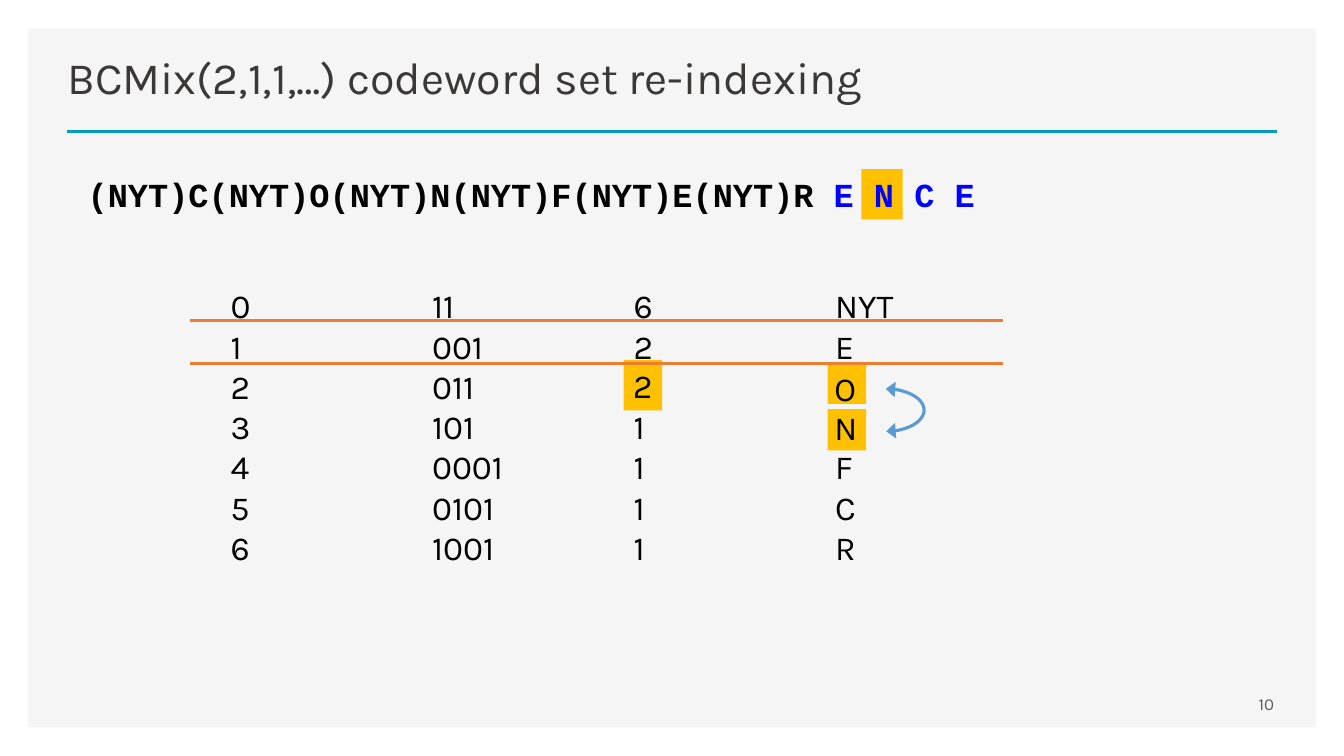
import pptx
import pptx.util
from lxml import etree
from pptx.dml.color import RGBColor
from pptx.enum.shapes import MSO_CONNECTOR, MSO_SHAPE
from pptx.enum.text import MSO_ANCHOR, PP_ALIGN
from pptx.oxml.ns import qn
from pptx.util import Cm

# Colours and fonts
PANEL = RGBColor(0xF5, 0xF5, 0xF5)
TEAL = RGBColor(0x00, 0x9B, 0xC0)
GOLD = RGBColor(0xFF, 0xC0, 0x00)
ORANGE = RGBColor(0xED, 0x7D, 0x31)
SWAP_BLUE = RGBColor(0x5B, 0x9B, 0xD5)
CODE_BLUE = RGBColor(0x00, 0x00, 0xFF)
TITLE_GREY = RGBColor(0x3B, 0x38, 0x38)
NUMBER_GREY = RGBColor(0x59, 0x59, 0x59)
BLACK = RGBColor(0, 0, 0)
SANS, MONO = "Karla", "Courier New"

# Content
TITLE = "BCMix(2,1,1,…) codeword set re-indexing"
SENT = "".join("(NYT)" + letter for letter in "CONFER") + " "
REST = "E N C E"
CODEWORDS = [  # index, codeword, count, symbol
    ("0", "11", "6", "NYT"),
    ("1", "001", "2", "E"),
    ("2", "011", "", ""),
    ("3", "101", "1", ""),
    ("4", "0001", "1", "F"),
    ("5", "0101", "1", "C"),
    ("6", "1001", "1", "R"),
]
TAB_STOPS = [2.54 * n for n in range(1, 7)]
SWAPPED = [("O", 9.14, 9.14), ("N", 10.31, 10.13)]  # symbol, box top, text top
GROUP_LINES = [9.16, 8.08]

prs = pptx.Presentation()
prs.slide_width, prs.slide_height = Cm(33.87), Cm(19.05)
s = prs.slides.add_slide(prs.slide_layouts[6])


def add_rect(x, y, w, h, color):
    sp = s.shapes.add_shape(MSO_SHAPE.RECTANGLE, Cm(x), Cm(y), Cm(w), Cm(h))
    sp.shadow.inherit = False
    sp.fill.solid()
    sp.fill.fore_color.rgb = color
    sp.line.fill.background()
    return sp


def add_rule(x1, x2, y, color, width):
    ln = s.shapes.add_connector(MSO_CONNECTOR.STRAIGHT, Cm(x1), Cm(y), Cm(x2), Cm(y))
    ln.line.color.rgb = color
    ln.line.width = pptx.util.Pt(width)
    etree.SubElement(ln._element.spPr, qn("a:effectLst"))


def add_text(text, box=None, sp=None, size=24, font=SANS, color=BLACK, bold=False,
             align=PP_ALIGN.LEFT, anchor=MSO_ANCHOR.TOP, wrap=False, tabs=()):
    """Write lines of text, each a string or a list of (text, color) runs."""
    if sp is None:
        sp = s.shapes.add_textbox(*[Cm(v) for v in box])
    tf = sp.text_frame
    tf.word_wrap = wrap
    tf.vertical_anchor = anchor
    for i, line in enumerate(text if isinstance(text, list) else [text]):
        p = tf.add_paragraph() if i else tf.paragraphs[0]
        p.alignment = align
        if tabs:
            stops = etree.SubElement(p._p.get_or_add_pPr(), qn("a:tabLst"))
            for pos in tabs:
                etree.SubElement(stops, qn("a:tab"), pos=str(int(Cm(pos))), algn="l")
        for words, run_color in [(line, color)] if isinstance(line, str) else line:
            r = p.add_run()
            r.text = words
            r.font.size = pptx.util.Pt(size)
            r.font.name = font
            r.font.bold = bold
            r.font.color.rgb = run_color


# Panel, title and rule
add_rect(0.71, 0.73, 32.46, 17.6, PANEL)
add_rule(1.68, 32.18, 3.31, TEAL, 2)
add_text(TITLE, (1.45, 0.95, 30.3, 1.78), size=32, color=TITLE_GREY,
         anchor=MSO_ANCHOR.BOTTOM, wrap=True)

# Encoded sequence with the current letter marked
add_rect(21.71, 4.26, 1.04, 1.27, GOLD)
add_text([[(SENT, BLACK), (REST, CODE_BLUE)]], (1.96, 4.26, 23.04, 1.27),
         font=MONO, bold=True)

# Codeword list, two tab stops per column
add_text(["\t\t".join(row) for row in CODEWORDS], (5.56, 7.06, 18.47, 7.44),
         tabs=TAB_STOPS)

# Swapped symbols and the raised count
for symbol, box_top, text_top in SWAPPED:
    add_rect(20.86, box_top, 0.97, 1.04, GOLD)
    add_text(symbol, (20.78, text_top, 1.17, 1.27))
count = add_rect(15.72, 9.07, 0.97, 1.27, GOLD)
add_text("2", sp=count, align=PP_ALIGN.CENTER, anchor=MSO_ANCHOR.MIDDLE)

# Swap arrow
arc = s.shapes.add_shape(MSO_SHAPE.ARC, Cm(21.36), Cm(9.8), Cm(1.93), Cm(1.07))
arc.adjustments[0], arc.adjustments[1] = 162.0, 53.31
arc.shadow.inherit = False
arc.fill.background()
arc.line.color.rgb = SWAP_BLUE
arc.line.width = pptx.util.Pt(2.25)
for end in ("a:headEnd", "a:tailEnd"):
    etree.SubElement(arc.line._get_or_add_ln(), qn(end), type="triangle", w="lg", len="med")

# Group lines
for y in GROUP_LINES:
    add_rule(4.78, 25.27, y, ORANGE, 2.25)

# Slide number
add_text("10", (23.27, 17.22, 9.09, 1.02), size=12, color=NUMBER_GREY,
         align=PP_ALIGN.RIGHT, anchor=MSO_ANCHOR.MIDDLE, wrap=True)

prs.save("out.pptx")
